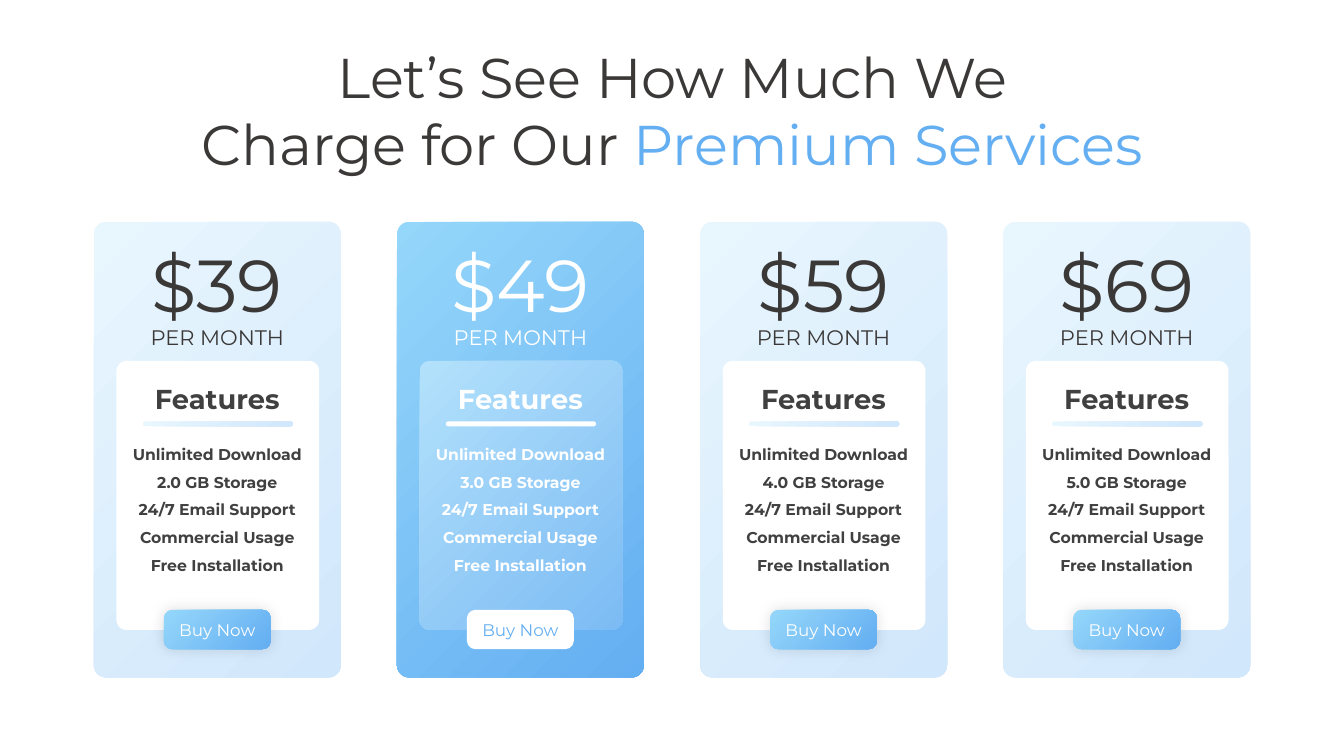
from lxml import etree
from pptx import Presentation
from pptx.dml.color import RGBColor
from pptx.enum import shapes, text
from pptx.oxml import ns
from pptx.util import Inches, Pt

COLORS = {"ink": "3B3838", "gray": "404040", "white": "FFFFFF", "blue": "64AEF2"}
GRADIENTS = {
    "pale": ("E8F6FE", "D1E7FB"),
    "vivid": ("95D7FA", "64AEF2"),
    "glass": ("B3E1FB", "7CBBF4"),
}


def add_box(x, y, w, h, adj, paint):
    sp = s.shapes.add_shape(shapes.MSO_SHAPE.ROUNDED_RECTANGLE,
                            Inches(x), Inches(y), Inches(w), Inches(h))
    sp.adjustments[0] = adj
    sp.shadow.inherit = False
    sp.line.fill.background()
    if paint in GRADIENTS:
        sp.fill.gradient()
        sp.fill.gradient_angle = 315
        for stop, color in zip(sp.fill.gradient_stops, GRADIENTS[paint]):
            stop.color.rgb = RGBColor.from_string(color)
    else:
        sp.fill.solid()
        sp.fill.fore_color.rgb = RGBColor.from_string(COLORS[paint])
    return sp


def write(sp, content, size, color, bold=False, gap=0):
    tf = sp.text_frame
    tf.text = content
    tf.word_wrap = True
    for p in tf.paragraphs:
        p.alignment = text.PP_ALIGN.CENTER
        p.space_after = Pt(gap)
        for r in p.runs:
            r.font.name = "Montserrat"
            r.font.size = Pt(size)
            r.font.bold = bold
            r.font.color.rgb = RGBColor.from_string(COLORS[color])
    return tf


prs = Presentation()
prs.slide_width, prs.slide_height = Inches(13.33), Inches(7.5)
s = prs.slides.add_slide(prs.slide_layouts[5])

title = s.shapes.title
title.left, title.top = Inches(1.41), Inches(0.37)
title.width, title.height = Inches(10.52), Inches(1.45)
tf = write(title, "Let’s See How Much We\nCharge for Our ", 40, "ink")
tf.auto_size = text.MSO_AUTO_SIZE.NONE
tf.vertical_anchor = text.MSO_ANCHOR.TOP
r = tf.paragraphs[1].add_run()
r.text = "Premium Services"
r.font.name = "Montserrat"
r.font.size = Pt(40)
r.font.bold = False
r.font.color.rgb = RGBColor.from_string(COLORS["blue"])

plans = [("$39", "2.0"), ("$49", "3.0"), ("$59", "4.0"), ("$69", "5.0")]
card_w = 2.45
pitch = (9.95 - 0.93) / (len(plans) - 1)

for i, (price, storage) in enumerate(plans):
    featured = price == "$49"
    left = 0.93 + i * pitch
    mid = left + card_w / 2
    price_color = "white" if featured else "ink"
    text_color = "white" if featured else "gray"

    add_box(left, 2.2, card_w, 4.52, 0.05, "vivid" if featured else "pale")
    add_box(mid - 1, 3.58, 2.01, 2.67, 0.05, "glass" if featured else "white")
    add_box(mid - 0.74, 4.18, 1.49, 0.05, 0.5, "white" if featured else "pale")

    features = "\n".join(["Unlimited Download", f"{storage} GB Storage",
                          "24/7 Email Support", "Commercial Usage",
                          "Free Installation"])
    blocks = [
        (price, 2.32, 0.98, 52.5, price_color, False, 0),
        ("PER MONTH", 3.17, 0.35, 15, price_color, False, 0),
        ("Features", 3.74, 0.43, 19.5, text_color, True, 0),
        (features, 4.36, 1.42, 11.2, text_color, True, 6.5),
    ]
    for content, top, height, size, color, bold, gap in blocks:
        tb = s.shapes.add_textbox(Inches(mid - 1), Inches(top), Inches(2), Inches(height))
        write(tb, content, size, color, bold, gap)

    button = add_box(mid - 0.53, 6.05, 1.06, 0.39, 0.21, "white" if featured else "vivid")
    tf = write(button, "Buy Now", 12, "blue" if featured else "white")
    tf.word_wrap = False
    tf.vertical_anchor = text.MSO_ANCHOR.MIDDLE
    if not featured:
        effects = button._element.spPr.find(ns.qn("a:effectLst"))
        glow = etree.SubElement(effects, ns.qn("a:outerShdw"), blurRad=str(Pt(10)), dist="0")
        black = etree.SubElement(glow, ns.qn("a:srgbClr"), val="000000")
        etree.SubElement(black, ns.qn("a:alpha"), val="12000")

prs.save("out.pptx")
